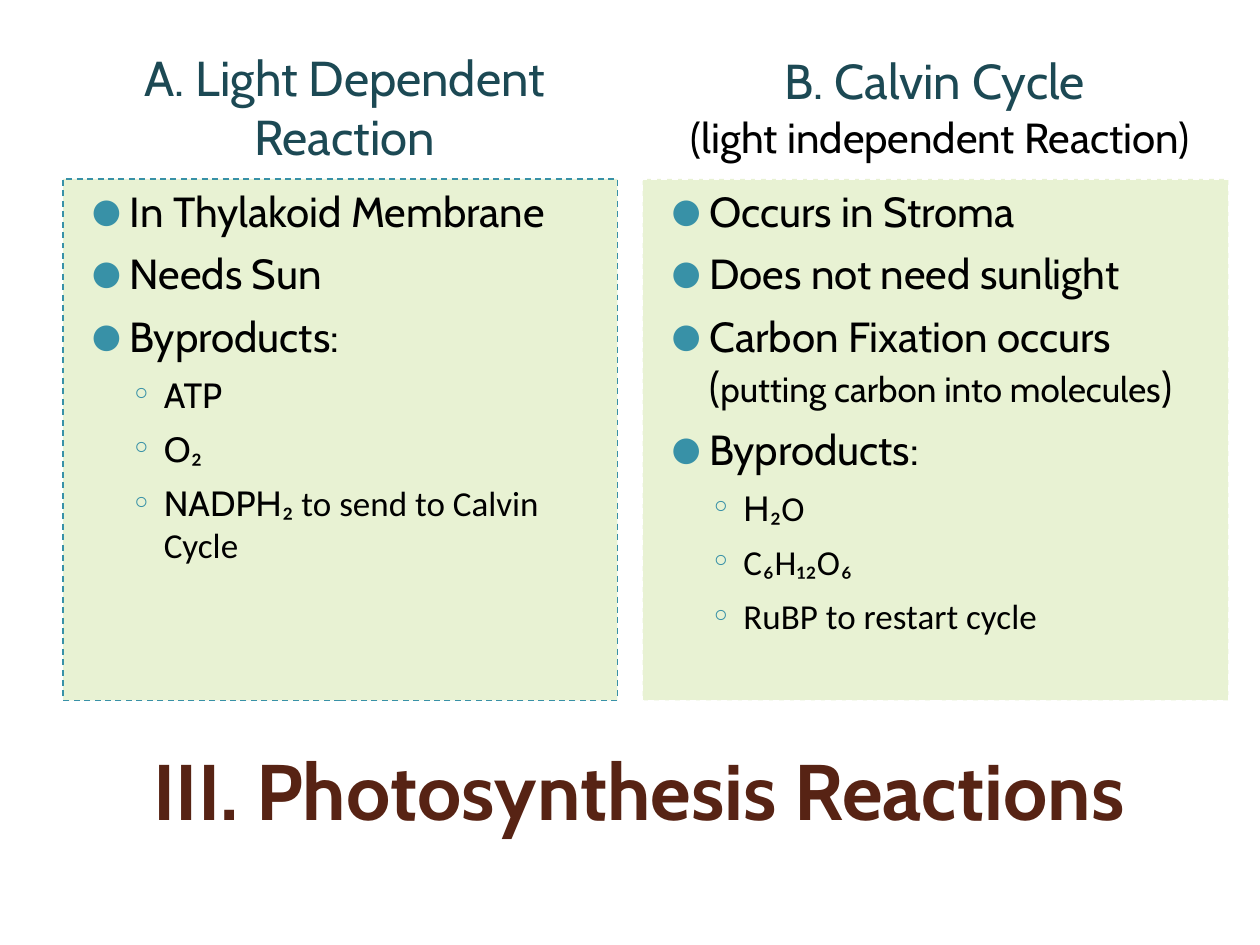
from lxml.etree import SubElement as Sub
from pptx import Presentation
from pptx.dml.color import RGBColor as RGB
from pptx.enum.dml import MSO_LINE as Dash
from pptx.enum.text import MSO_ANCHOR as Anchor, MSO_AUTO_SIZE as Fit, PP_ALIGN as Align
from pptx.oxml.ns import qn
from pptx.util import Inches, Pt

WHITE, BLACK, TEAL, NAVY, BROWN, LIME = (
    "FFFFFF", "000000", "3891A7", "1C4954", "572314", "E8F2D3")
MAIN, ALT = "Cabin", "Calibri"
HEAD, BODY, FOOT = (4.8, 12.93), (18.93, 55.2), (75.2, 16.67)
MARKS = [(0.43, -0.3, "●", 80), (0.7, -0.26, "◦", 100)]

SIDES = [
    {"span": (5, 44), "edge": TEAL,
     "head": [("A. Light Dependent Reaction", 28, NAVY)],
     "list": [
         (0, [("In Thylakoid Membrane", 24, MAIN)]),
         (0, [("Needs Sun", 24, MAIN)]),
         (0, [("Byproducts:", 24, MAIN)]),
         (1, [("ATP", 20, MAIN)]),
         (1, [("O", 20, MAIN), ("₂", 20, ALT)]),
         (1, [("NADPH", 20, MAIN), ("₂ to send to Calvin Cycle", 20, ALT)])]},
    {"span": (51, 46.5), "edge": WHITE,
     "head": [("B. Calvin Cycle ", 28, NAVY),
              ("(light independent Reaction)", 24, BLACK)],
     "list": [
         (0, [("Occurs in Stroma", 24, MAIN)]),
         (0, [("Does not need sunlight", 24, MAIN)]),
         (0, [("Carbon Fixation occurs (", 24, MAIN),
              ("putting carbon into molecules", 20, MAIN), (")", 24, MAIN)]),
         (0, [("Byproducts:", 24, MAIN)]),
         (1, [("H", 20, MAIN), ("₂O", 20, ALT)]),
         (1, [("C₆H₁₂O₆", 20, ALT)]),
         (1, [("RuBP to restart cycle", 20, ALT)])]},
]


def tint(hue):
    """Turn a hex string into a colour."""
    return RGB.from_string(hue)


def style(item, form):
    """Set each attribute named in a dict."""
    for name, value in form.items():
        setattr(item, name, value)


def place(deck, shape, span, band, anchor):
    """Move a placeholder to percent shares of the slide and set its frame."""
    wide, high = deck.slide_width / 100, deck.slide_height / 100
    style(shape, {"left": int(span[0] * wide), "top": int(band[0] * high),
                  "width": int(span[1] * wide), "height": int(band[1] * high)})
    style(shape.text_frame, {"word_wrap": True, "auto_size": Fit.NONE,
                             "vertical_anchor": anchor})


def paint(shape, fill, edge, dash=None):
    """Fill and outline a box."""
    shape.fill.solid()
    shape.fill.fore_color.rgb = tint(fill)
    shape.line.color.rgb = tint(edge)
    style(shape.line, {"width": Pt(0.85), "dash_style": dash})


def write(para, text, size, hue, font=MAIN, bold=False):
    """Add one run of text."""
    run = para.add_run()
    run.text = text
    style(run.font, {"size": Pt(size), "name": font, "bold": bold})
    run.font.color.rgb = tint(hue)


def lines(frame, count):
    """Return the given number of paragraphs of a frame."""
    return [frame.paragraphs[0]] + [frame.add_paragraph() for _ in range(count - 1)]


def indent(para, left, first):
    """Set the margins of a paragraph and return its properties."""
    props = para._p.get_or_add_pPr()
    props.set("marL", str(Inches(left)))
    props.set("indent", str(Inches(first)))
    return props


def bullet(para, level):
    """Give a paragraph the mark of its level."""
    left, first, sign, size = MARKS[level]
    style(para, {"level": level, "space_before": Pt(7)})
    props = indent(para, left, first)
    Sub(Sub(props, qn("a:buClr")), qn("a:srgbClr"), val=TEAL)
    Sub(props, qn("a:buSzPct"), val=str(size * 1000))
    Sub(props, qn("a:buFont"), typeface=MAIN)
    Sub(props, qn("a:buChar"), char=sign)


def heading(deck, shape, side):
    """Build the heading of one column."""
    place(deck, shape, side["span"], HEAD, Anchor.MIDDLE)
    paint(shape, WHITE, WHITE)
    for para, row in zip(lines(shape.text_frame, len(side["head"])), side["head"]):
        style(para, {"alignment": Align.CENTER, "space_before": Pt(1)})
        indent(para, 0.07, 0)
        write(para, *row)


def listing(deck, shape, side):
    """Build the bulleted box of one column."""
    place(deck, shape, side["span"], BODY, Anchor.TOP)
    paint(shape, LIME, side["edge"], Dash.DASH)
    for para, (level, runs) in zip(lines(shape.text_frame, len(side["list"])), side["list"]):
        bullet(para, level)
        for text, size, font in runs:
            write(para, text, size, BLACK, font)


def main():
    """Build and save the slide."""
    deck = Presentation()
    style(deck, {"slide_width": Inches(10), "slide_height": Inches(7.5)})
    slide = deck.slides.add_slide(deck.slide_layouts[4])
    title, *parts = list(slide.placeholders)[:5]
    place(deck, title, (5, 90), FOOT, Anchor.MIDDLE)
    para = title.text_frame.paragraphs[0]
    para.alignment = Align.CENTER
    write(para, " III. Photosynthesis Reactions", 45, BROWN, bold=True)
    for side, head, body in zip(SIDES, parts[::2], parts[1::2]):
        heading(deck, head, side)
        listing(deck, body, side)
    deck.save("out.pptx")


if __name__ == "__main__":
    main()
